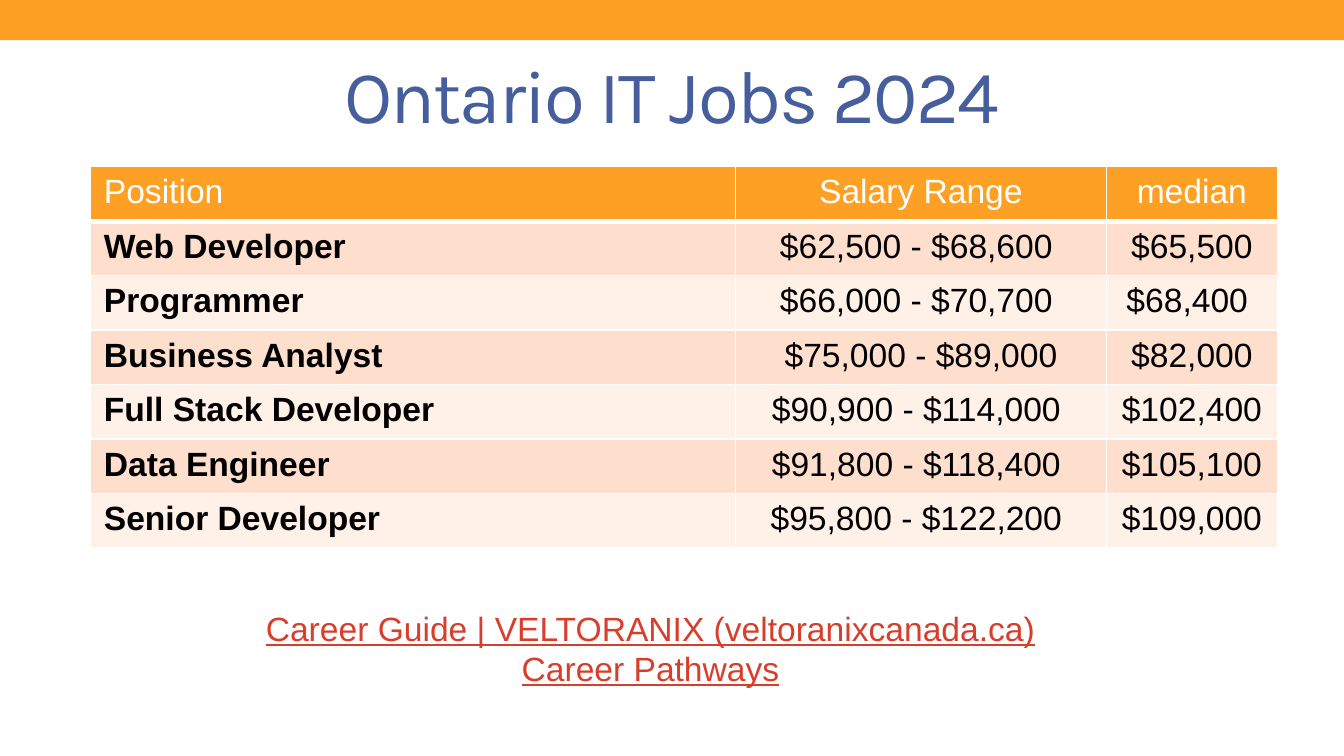
"""Build the Ontario IT jobs salary slide."""
from lxml.etree import SubElement
from pptx import Presentation
from pptx.dml.color import RGBColor
from pptx.enum.shapes import MSO_SHAPE
from pptx.enum.text import MSO_ANCHOR, PP_ALIGN
from pptx.oxml.ns import qn
from pptx.util import Cm, Pt

ORANGE, WHITE, BLACK = "FDA023", "FFFFFF", "000000"
BLUE, RED = "465E9C", "D83E2C"
BANDS = ("FEDFCD", "FFF0E8")
COLUMN_WIDTHS = (12.19, 7.01, 3.23)
ROW_HEIGHT = 1.03
JOBS = (
    ("Position", "Salary Range", "median"),
    ("Web Developer", "$62,500 - $68,600 ", "$65,500"),
    ("Programmer", "$66,000 - $70,700 ", "$68,400 "),
    ("Business Analyst", "$75,000 - $89,000", "$82,000"),
    ("Full Stack Developer", "$90,900 - $114,000 ", "$102,400"),
    ("Data Engineer", "$91,800 - $118,400 ", "$105,100"),
    ("Senior Developer", "$95,800 - $122,200 ", "$109,000 "),
)


def color(value):
    """Turn a hex string into a colour."""
    return RGBColor.from_string(value)


def paint(item, value):
    """Give a shape or cell a solid fill."""
    item.fill.solid()
    item.fill.fore_color.rgb = color(value)


def write(frame, text, size, ink, font="Arial", align=PP_ALIGN.CENTER, bold=False):
    """Write one styled paragraph into a text frame and return it."""
    para = frame.paragraphs[0]
    para.text = text
    para.alignment = align
    para.font.name = font
    para.font.size = Pt(size)
    para.font.bold = bold
    para.font.color.rgb = color(ink)
    return para


def add_band(page, width):
    """Add the orange band along the top edge."""
    band = page.shapes.add_shape(MSO_SHAPE.RECTANGLE, 0, 0, width, Cm(0.76))
    band.shadow.inherit = False
    paint(band, ORANGE)
    band.line.fill.background()


def add_text(page, left, top, width, height, text, size, ink, font="Arial"):
    """Add a wrapped text box with one centred paragraph and return the paragraph."""
    box = page.shapes.add_textbox(Cm(left), Cm(top), Cm(width), Cm(height))
    frame = box.text_frame
    frame.word_wrap = True
    frame.vertical_anchor = MSO_ANCHOR.MIDDLE
    return write(frame, text, size, ink, font)


def add_borders(cell, bottom):
    """Draw white borders around a cell, with the bottom width in points."""
    properties = cell._tc.get_or_add_tcPr()
    for index, (side, points) in enumerate(zip("LRTB", (1, 1, 1, bottom))):
        line = properties.makeelement(qn(f"a:ln{side}"), w=str(Pt(points)))
        fill = SubElement(line, qn("a:solidFill"))
        SubElement(fill, qn("a:srgbClr"), val=WHITE)
        properties.insert(index, line)


def add_salary_table(page):
    """Add the salary table with a header and banded rows."""
    table = page.shapes.add_table(
        len(JOBS), len(COLUMN_WIDTHS), Cm(1.71), Cm(3.15),
        Cm(sum(COLUMN_WIDTHS)), Cm(ROW_HEIGHT * len(JOBS))).table
    for column, width in zip(table.columns, COLUMN_WIDTHS):
        column.width = Cm(width)
    for row, values in enumerate(JOBS):
        table.rows[row].height = Cm(ROW_HEIGHT)
        header = row == 0
        for column, value in enumerate(values):
            cell = table.cell(row, column)
            first = column == 0
            paint(cell, ORANGE if header else BANDS[(row - 1) % 2])
            add_borders(cell, 3 if header else 1)
            write(cell.text_frame, value, 18, WHITE if header else BLACK,
                  align=PP_ALIGN.LEFT if first else PP_ALIGN.CENTER,
                  bold=first and not header)


def main():
    """Build and save the slide."""
    deck = Presentation()
    deck.slide_width, deck.slide_height = Cm(25.4), Cm(14.29)
    page = deck.slides.add_slide(deck.slide_layouts[6])
    add_band(page, deck.slide_width)
    title = add_text(page, 1.27, 0.74, 22.86, 2.06, "Ontario IT Jobs 2024", 40, BLUE, "Karla")
    title.runs[0].font._element.set("spc", "-100")
    add_salary_table(page)
    sources = add_text(page, 2.49, 11.35, 19.61, 1.8,
                       "Career Guide | VELTORANIX (veltoranixcanada.ca)\vCareer Pathways", 18, RED)
    sources.font.underline = True
    deck.save("out.pptx")


if __name__ == "__main__":
    main()
